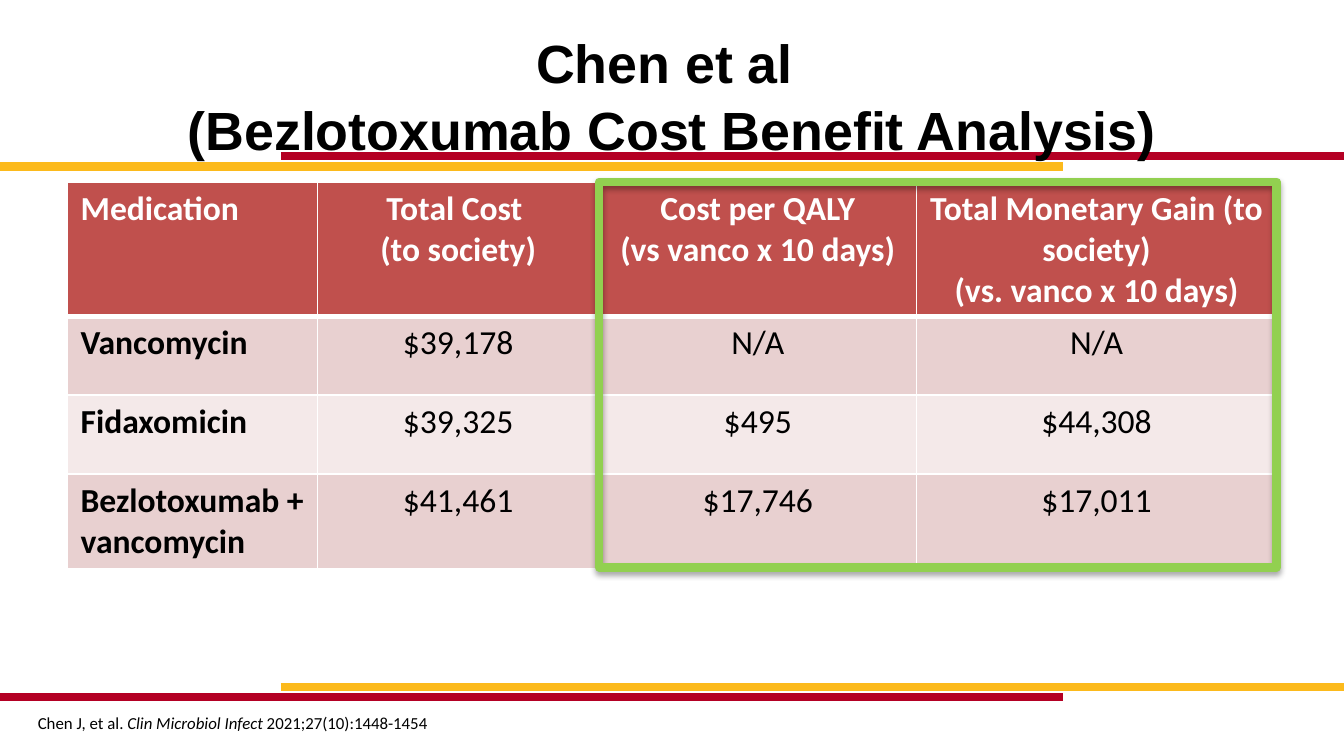
from lxml import etree
from pptx import Presentation, util as u
from pptx.dml.color import RGBColor
from pptx.enum import shapes, text
from pptx.oxml import ns

Pt = u.Pt
LEFT, MID = text.PP_ALIGN.LEFT, text.PP_ALIGN.CENTER
RIGHT = text.PP_ALIGN.RIGHT
RED, GOLD, GREEN = "B40024", "FCBA1C", "92D050"
HEAD, DARK, PALE = "C0504D", "E8D0D0", "F4E9E9"
WHITE, BLACK = "FFFFFF", "000000"


def color(code):
    return RGBColor.from_string(code)


def sub(parent, tag, **attrs):
    node = etree.SubElement(parent, ns.qn(tag))
    for key, value in attrs.items():
        node.set(key, str(value))
    return node


class Deck:
    """Holds the style and the current slide."""
    font = "Calibri"

    def __init__(self):
        self.prs = Presentation()
        self.prs.slide_width, self.prs.slide_height = Pt(720), Pt(405)
        self.slide = self.prs.slides.add_slide(self.prs.slide_layouts[5])
        self.items = self.slide.shapes

    def style(self, para, size, code=BLACK, bold=False, align=LEFT, font=None):
        para.alignment = align
        para.font.name = font or self.font
        para.font.size = Pt(size)
        para.font.bold = bold
        para.font.color.rgb = color(code)

    def rule(self, start, end, y, code):
        line = self.items.add_connector(
            shapes.MSO_CONNECTOR.STRAIGHT, Pt(start), Pt(y), Pt(end), Pt(y))
        line.line.color.rgb = color(code)
        line.line.width = Pt(4.5)
        sub(line._element.spPr, "a:effectLst")

    def title(self, words, x, y, w, h):
        box = self.items.title
        box.left, box.top, box.width, box.height = map(Pt, (x, y, w, h))
        frame = box.text_frame
        frame.text = words
        frame.auto_size = text.MSO_AUTO_SIZE.NONE
        frame.vertical_anchor = text.MSO_ANCHOR.MIDDLE
        para = frame.paragraphs[0]
        self.style(para, 28.8, bold=True, align=MID, font="Arial")
        para.line_spacing = 1.04
        # Bring the title in front of the rules
        self.items._spTree.append(box._element)

    def note(self, parts, x, y, w, h):
        box = self.items.add_textbox(*map(Pt, (x, y, w, h)))
        box.text_frame.word_wrap = True
        para = box.text_frame.paragraphs[0]
        self.style(para, 9, align=RIGHT)
        for words, slant in parts:
            run = para.add_run()
            run.text = words
            run.font.italic = slant

    def edges(self, cell, low):
        props = cell._tc.get_or_add_tcPr()
        for side, width in (("L", 1), ("R", 1), ("T", 1), ("B", low)):
            line = sub(props, "a:ln" + side, w=Pt(width))
            sub(sub(line, "a:solidFill"), "a:srgbClr", val=WHITE)

    def table(self, rows, x, y, widths, heights):
        grid = self.items.add_table(
            len(rows), len(widths), Pt(x), Pt(y),
            Pt(sum(widths)), Pt(sum(heights))).table
        for col, width in zip(grid.columns, widths):
            col.width = Pt(width)
        for r, (row, height) in enumerate(zip(rows, heights)):
            grid.rows[r].height = Pt(height)
            fill = HEAD if r == 0 else DARK if r % 2 else PALE
            for c, words in enumerate(row):
                cell = grid.cell(r, c)
                cell.text = words
                self.style(cell.text_frame.paragraphs[0], 18,
                           BLACK if r else WHITE, bold=r == 0 or c == 0,
                           align=MID if c else LEFT)
                self.edges(cell, 1 if r else 3)
                cell.fill.solid()
                cell.fill.fore_color.rgb = color(fill)

    def frame(self, x, y, w, h):
        box = self.items.add_shape(
            shapes.MSO_SHAPE.RECTANGLE, *map(Pt, (x, y, w, h)))
        box.fill.background()
        box.line.color.rgb = color(GREEN)
        box.line.width = Pt(4.5)
        # Soft shadow straight below
        glow = sub(sub(box._element.spPr, "a:effectLst"), "a:outerShdw",
                   blurRad=Pt(3.1), dist=Pt(1.8), dir=5400000, rotWithShape=0)
        sub(sub(glow, "a:srgbClr", val=BLACK), "a:alpha", val=35000)


def main():
    deck = Deck()

    # Red and gold rules, above and below
    for start, end, y, code in ((0, 569.5, 373.5, RED), (150.5, 720, 83.5, RED),
                                (0, 569.5, 89.2, GOLD), (150.5, 720, 368, GOLD)):
        deck.rule(start, end, y, code)

    # Title and citation
    deck.title("Chen et al \v(Bezlotoxumab Cost Benefit Analysis)",
               36, 16.5, 648, 67.5)
    deck.note((("Chen J, et al. ", False), ("Clin Microbiol Infect", True),
               (" 2021;27(10):1448-1454", False)), 0, 378, 236, 18)

    # Cost table
    widths, heights = (134, 151, 170, 193), (71.5, 42.3, 42.3, 50.5)
    deck.table((
        ("Medication", "Total Cost \v(to society)",
         "Cost per QALY\v(vs vanco x 10 days)",
         "Total Monetary Gain (to society)\v(vs. vanco x 10 days)"),
        ("Vancomycin", "$39,178", "N/A", "N/A"),
        ("Fidaxomicin", "$39,325", "$495", "$44,308"),
        ("Bezlotoxumab + vancomycin", "$41,461", "$17,746", "$17,011"),
    ), 36, 97.4, widths, heights)

    # Frame around the last two columns
    deck.frame(36 + sum(widths[:2]), 97.4, sum(widths[2:]), sum(heights))

    deck.prs.save("out.pptx")


if __name__ == "__main__":
    main()
